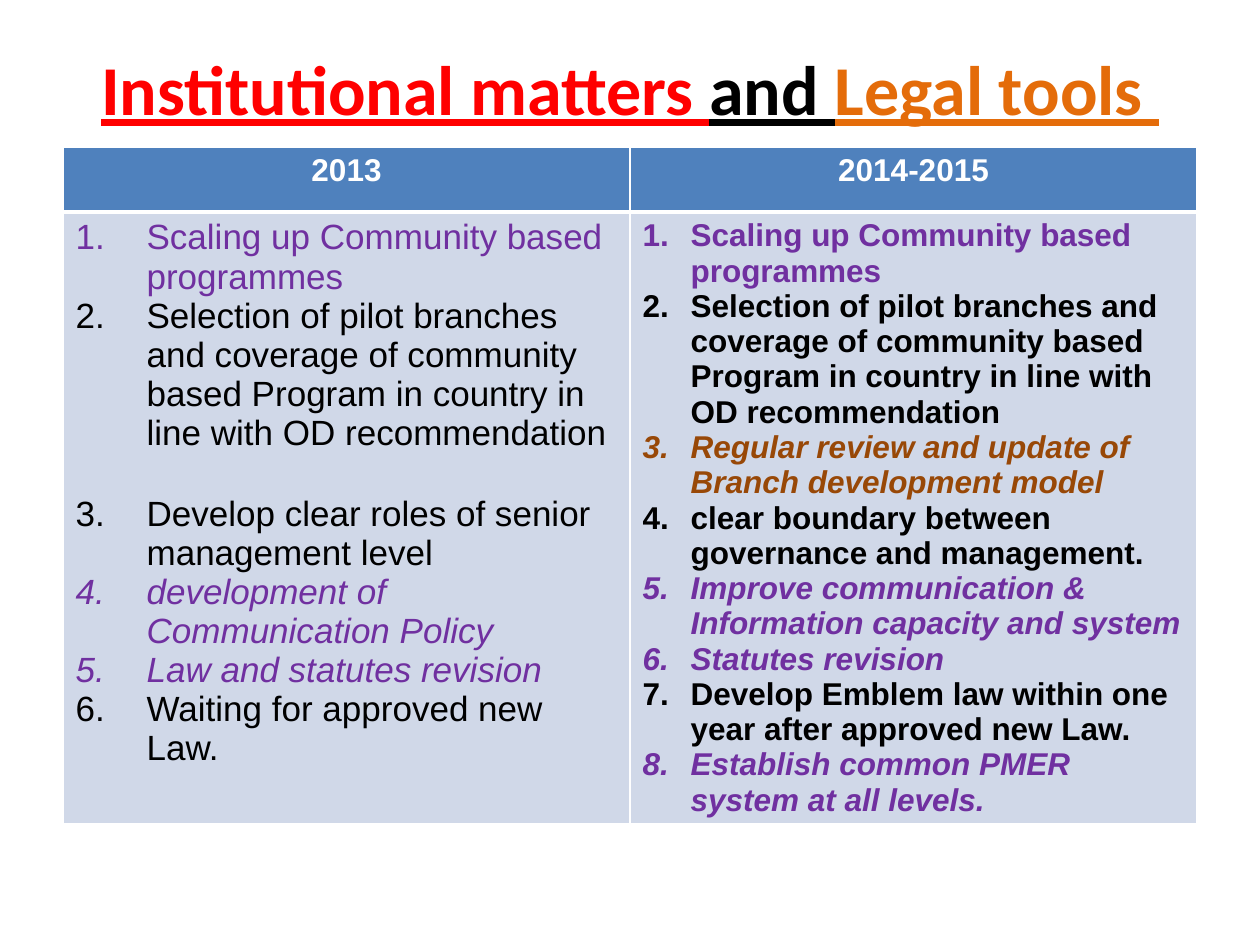
from dataclasses import dataclass

from lxml import etree
from pptx import Presentation
from pptx.dml.color import RGBColor
from pptx.enum.text import MSO_ANCHOR, PP_ALIGN
from pptx.oxml.ns import qn
from pptx.util import Pt

CENTER = PP_ALIGN.CENTER
MIDDLE = MSO_ANCHOR.MIDDLE
EMU_PER_PX = 914400 / 126


@dataclass(frozen=True)
class Theme:
    title_font: str = "Calibri"
    body_font: str = "Arial"
    title_size: int = 40
    header_size: int = 18
    red: str = "FF0000"
    orange: str = "E46C0A"
    black: str = "000000"
    white: str = "FFFFFF"
    purple: str = "7030A0"
    brown: str = "984807"
    header_fill: str = "4F81BD"
    body_fill: str = "D0D8E8"


@dataclass(frozen=True)
class Item:
    text: str
    color: str = Theme.black
    italic: bool = False
    gap: int = 0


@dataclass(frozen=True)
class Column:
    heading: str
    size: int
    bold: bool
    indent: int
    items: tuple


THEME = Theme()
TITLE = (
    ("Institutional matters ", THEME.red),
    ("and ", THEME.black),
    ("Legal tools ", THEME.orange),
)
SCALING = Item("Scaling up Community based programmes", THEME.purple)
PILOT = Item("Selection of pilot branches and coverage of community based "
             "Program in country in line with OD recommendation")
COLUMNS = (
    Column("2013", 20, False, 71, (
        SCALING,
        PILOT,
        Item("Develop clear roles of senior management level", gap=24),
        Item("development of Communication Policy", THEME.purple, True),
        Item("Law and statutes revision", THEME.purple, True),
        Item("Waiting for approved new Law."),
    )),
    Column("2014-2015", 18, True, 48, (
        SCALING,
        PILOT,
        Item("Regular review and update of Branch development model", THEME.brown, True),
        Item("clear boundary between governance and management."),
        Item("Improve communication & Information capacity and system", THEME.purple, True),
        Item("Statutes revision", THEME.purple, True),
        Item("Develop Emblem law within one year after approved new Law."),
        Item("Establish common PMER system at all levels.", THEME.purple, True),
    )),
)


def px(n):
    return round(n * EMU_PER_PX)


def rgb(value):
    return RGBColor.from_string(value)


def style_font(font, name, size, color, bold, italic=False):
    font.name = name
    font.size = Pt(size)
    font.color.rgb = rgb(color)
    font.bold = bold
    font.italic = italic


def style_cell(cell, fill, top, bottom):
    tc_pr = cell._tc.get_or_add_tcPr()
    for side, width in (("L", 1), ("R", 1), ("T", top), ("B", bottom)):
        ln = etree.SubElement(tc_pr, qn(f"a:ln{side}"), w=str(Pt(width)))
        solid = etree.SubElement(ln, qn("a:solidFill"))
        etree.SubElement(solid, qn("a:srgbClr"), val=THEME.white)
    cell.fill.solid()
    cell.fill.fore_color.rgb = rgb(fill)


def number_paragraph(p, indent):
    p_pr = p._p.get_or_add_pPr()
    p_pr.set("marL", str(px(indent)))
    p_pr.set("indent", str(-px(indent)))
    etree.SubElement(p_pr, qn("a:buFont"), typeface="+mj-lt")
    etree.SubElement(p_pr, qn("a:buAutoNum"), type="arabicPeriod")


def add_title(s, x, y, w, h):
    sp = s.shapes.title
    sp.left, sp.top, sp.width, sp.height = map(px, (x, y, w, h))
    tf = sp.text_frame
    tf.word_wrap = True
    tf.vertical_anchor = MIDDLE
    p = tf.paragraphs[0]
    p.alignment = CENTER
    for text, color in TITLE:
        r = p.add_run()
        r.text = text
        style_font(r.font, THEME.title_font, THEME.title_size, color, True)
        r.font.underline = True


def fill_header(cell, column):
    style_cell(cell, THEME.header_fill, 1, 3)
    p = cell.text_frame.paragraphs[0]
    p.text = column.heading
    p.alignment = CENTER
    style_font(p.font, THEME.body_font, THEME.header_size, THEME.white, True)


def fill_list(cell, column):
    style_cell(cell, THEME.body_fill, 3, 1)
    tf = cell.text_frame
    for i, item in enumerate(column.items):
        p = tf.add_paragraph() if i else tf.paragraphs[0]
        if item.gap:
            p.space_before = Pt(item.gap)
        number_paragraph(p, column.indent)
        r = p.add_run()
        r.text = item.text
        style_font(r.font, THEME.body_font, column.size, item.color,
                   column.bold, item.italic)


def add_comparison(s, x, y, w, h, header_h):
    table = s.shapes.add_table(2, len(COLUMNS), px(x), px(y), px(w), px(h)).table
    table.rows[0].height = px(header_h)
    table.rows[1].height = px(h - header_h)
    for i, column in enumerate(COLUMNS):
        table.columns[i].width = px(w / len(COLUMNS))
        fill_header(table.cell(0, i), column)
        fill_list(table.cell(1, i), column)


def main():
    prs = Presentation()
    prs.slide_width, prs.slide_height = px(1260), px(945)
    s = prs.slides.add_slide(prs.slide_layouts[5])
    add_title(s, 63, 38, 1134, 99)
    add_comparison(s, 63, 147, 1134, 677, 65)
    prs.save("out.pptx")


if __name__ == "__main__":
    main()
